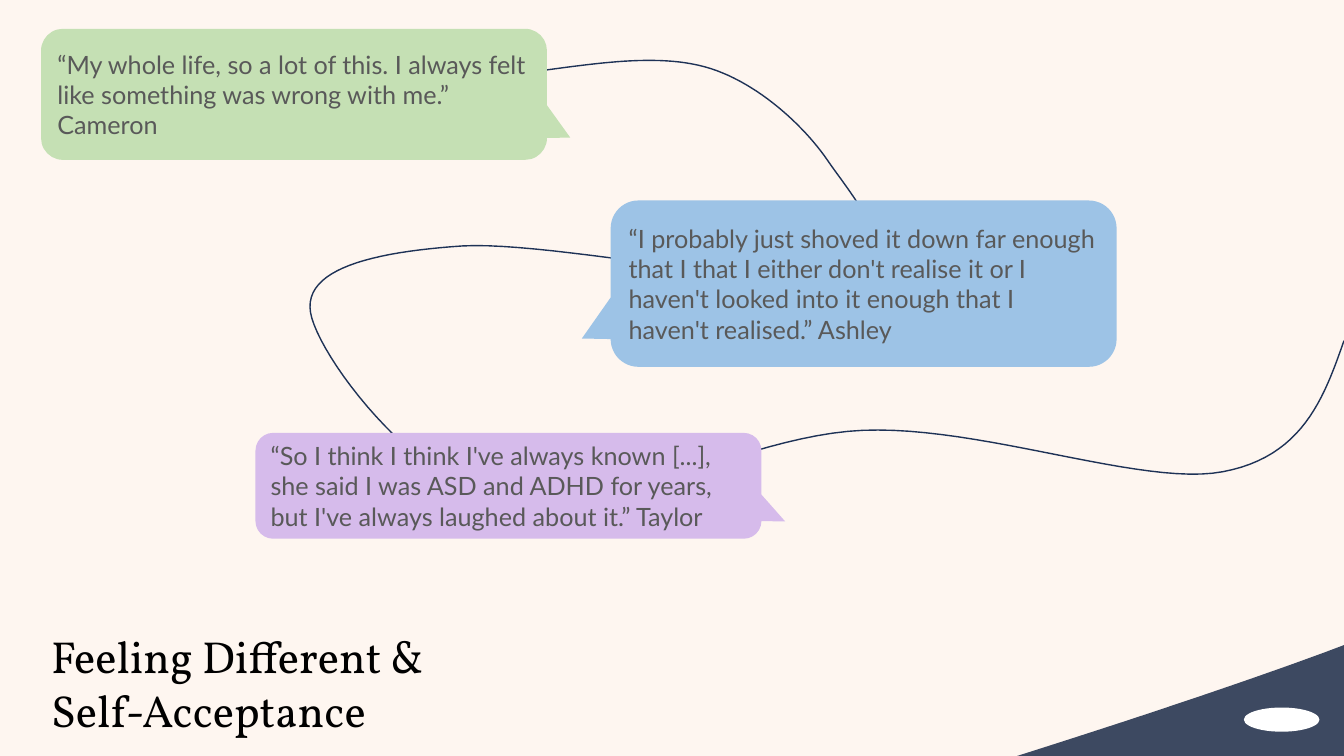
"""Build a slide of three quotations strung along a winding thread."""
from dataclasses import dataclass

from pptx import Presentation
from pptx.dml.color import RGBColor
from pptx.enum import shapes, text
from pptx.shapes.autoshape import Shape
from pptx.slide import Slide
from pptx.util import Pt

CREAM = RGBColor(0xFE, 0xF6, 0xF0)
SLATE = RGBColor(0x3D, 0x49, 0x61)
NAVY = RGBColor(0x1E, 0x32, 0x56)
GREEN = RGBColor(0xC5, 0xE0, 0xB4)
BLUE = RGBColor(0x9D, 0xC3, 0xE6)
LILAC = RGBColor(0xD6, 0xBB, 0xEB)
GREY = RGBColor(0x59, 0x59, 0x59)
WHITE = RGBColor(0xFF, 0xFF, 0xFF)
BLACK = RGBColor(0x00, 0x00, 0x00)

PAGE_WIDTH, PAGE_HEIGHT = 960, 540
BUBBLE_WIDTH = 361.4
CURVE_STEPS = 24

Point = tuple[float, float]
Bend = tuple[Point, Point, Point]


@dataclass(frozen=True)
class Quote:
    words: str
    left: float
    top: float
    height: float
    tail: Point
    colour: RGBColor


QUOTES = (
    Quote("“My whole life, so a lot of this. I always felt like something was "
          "wrong with me.” Cameron", 29.3, 20.6, 93.6, (0.546, 0.33), GREEN),
    Quote("“I probably just shoved it down far enough that I that I either don't "
          "realise it or I haven't looked into it enough that I haven't "
          "realised.” Ashley", 436.2, 143.2, 118.8, (-0.557, 0.33), BLUE),
    Quote("“So I think I think I've always known [...], she said I was ASD and "
          "ADHD for years, but I've always laughed about it.” Taylor",
          182.5, 309.2, 75.6, (0.547, 0.337), LILAC),
)

THREAD_START: Point = (387.4, 50.4)
THREAD_BENDS: tuple[Bend, ...] = (
    ((430.6, 44.6), (473.8, 38.2), (507.6, 49)),
    ((541.4, 59.8), (573.8, 89.3), (591.1, 114.5)),
    ((607.7, 139), (651.6, 188.6), (607.7, 198.7)),
    ((564.5, 208.8), (394.6, 172.1), (330.5, 175.7)),
    ((265.7, 180), (216.7, 192.2), (221.8, 223.2)),
    ((226.8, 253.4), (295.2, 345.6), (361.4, 360)),
    ((427, 374.4), (530.6, 311), (616.3, 307.4)),
    ((701.3, 303.8), (815.8, 347.8), (873.4, 337)),
    ((930.2, 326.2), (945.4, 285.1), (960, 243.4)),
)

CORNER_START: Point = (960, 460.8)
CORNER_BENDS: tuple[Bend, ...] = (((960, 460.8), (889.2, 488.5), (726.5, 540)),)


def trace(start: Point, bends: tuple[Bend, ...]) -> list[Point]:
    """Return points along a chain of cubic curves."""
    points = [start]
    for first, second, end in bends:
        origin = points[-1]
        for step in range(1, CURVE_STEPS + 1):
            t = step / CURVE_STEPS
            u = 1 - t
            weights = (u ** 3, 3 * u * u * t, 3 * u * t * t, t ** 3)
            anchors = (origin, first, second, end)
            points.append((sum(w * p[0] for w, p in zip(weights, anchors)),
                           sum(w * p[1] for w, p in zip(weights, anchors))))
    return points


def draw_outline(page: Slide, points: list[Point], close: bool) -> Shape:
    """Draw a freeform through the points."""
    scaled = [(Pt(x), Pt(y)) for x, y in points]
    builder = page.shapes.build_freeform(*scaled[0])
    builder.add_line_segments(scaled[1:], close=close)
    outline = builder.convert_to_shape()
    outline.shadow.inherit = False
    return outline


def paint(shape: Shape, colour: RGBColor) -> None:
    """Fill a shape flatly, without a line or shadow."""
    shape.shadow.inherit = False
    shape.fill.solid()
    shape.fill.fore_color.rgb = colour
    shape.line.fill.background()


def draw_preset(page: Slide, kind: shapes.MSO_SHAPE, left: float, top: float,
                width: float, height: float, colour: RGBColor) -> Shape:
    """Draw a flat preset shape."""
    shape = page.shapes.add_shape(kind, Pt(left), Pt(top), Pt(width), Pt(height))
    paint(shape, colour)
    return shape


def draw_corner(page: Slide) -> None:
    """Fill the swept corner at the lower right and set a badge on it."""
    points = trace(CORNER_START, CORNER_BENDS) + [(PAGE_WIDTH, PAGE_HEIGHT)]
    paint(draw_outline(page, points, close=True), SLATE)
    draw_preset(page, shapes.MSO_SHAPE.OVAL, 888.5, 505.4, 54, 17.3, WHITE)


def draw_thread(page: Slide) -> None:
    """Draw the thread that runs behind the quotations."""
    thread = draw_outline(page, trace(THREAD_START, THREAD_BENDS), close=False)
    thread.fill.background()
    thread.line.color.rgb = NAVY
    thread.line.width = Pt(1)


def write(box: Shape, words: str, font: str, size: float, colour: RGBColor) -> None:
    """Put one left-aligned paragraph in a box."""
    box.text_frame.word_wrap = True
    para = box.text_frame.paragraphs[0]
    para.text = words
    para.alignment = text.PP_ALIGN.LEFT
    para.font.name = font
    para.font.size = Pt(size)
    para.font.color.rgb = colour


def draw_quote(page: Slide, quote: Quote) -> None:
    """Draw a speech bubble holding a quotation."""
    bubble = draw_preset(page, shapes.MSO_SHAPE.ROUNDED_RECTANGULAR_CALLOUT,
                         quote.left, quote.top, BUBBLE_WIDTH, quote.height,
                         quote.colour)
    bubble.adjustments[0], bubble.adjustments[1] = quote.tail
    bubble.text_frame.vertical_anchor = text.MSO_ANCHOR.MIDDLE
    write(bubble, quote.words, "Lato", 18, GREY)


def draw_title(page: Slide) -> None:
    """Write the slide title at the lower left."""
    title = page.shapes.add_textbox(Pt(29.5), Pt(445.7), Pt(293.8), Pt(85))
    title.text_frame.auto_size = text.MSO_AUTO_SIZE.SHAPE_TO_FIT_TEXT
    write(title, "Feeling Different & Self-Acceptance", "Vollkorn", 32, BLACK)


def main() -> None:
    """Compose the slide and save the deck."""
    deck = Presentation()
    deck.slide_width, deck.slide_height = Pt(PAGE_WIDTH), Pt(PAGE_HEIGHT)
    page = deck.slides.add_slide(deck.slide_layouts[6])
    draw_preset(page, shapes.MSO_SHAPE.RECTANGLE, 0, 0, PAGE_WIDTH, PAGE_HEIGHT, CREAM)
    draw_corner(page)
    draw_thread(page)
    for quote in QUOTES:
        draw_quote(page, quote)
    draw_title(page)
    deck.save("out.pptx")


if __name__ == "__main__":
    main()
